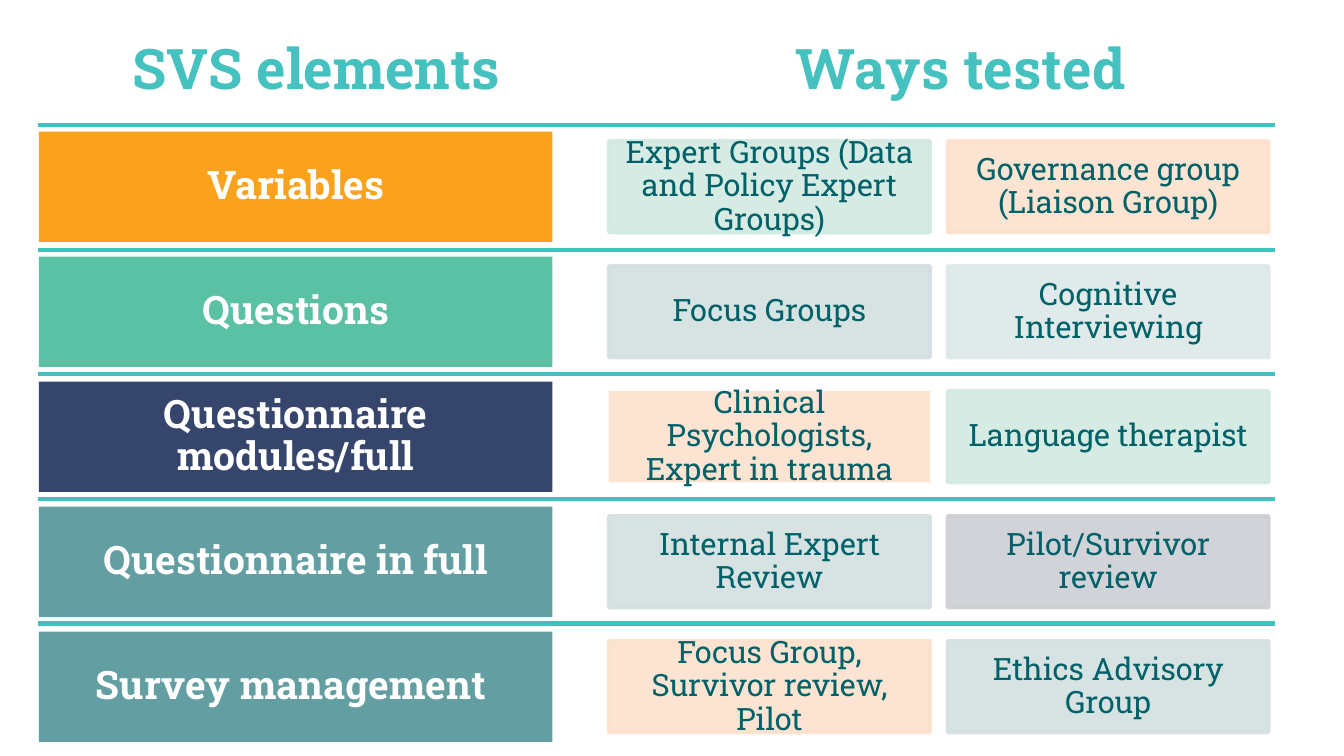
from dataclasses import dataclass

from lxml.etree import SubElement
from pptx import Presentation
from pptx.dml.color import RGBColor as RGB
from pptx.enum.shapes import MSO_CONNECTOR as Link, MSO_SHAPE as Kind
from pptx.enum.text import MSO_ANCHOR as Anchor, PP_ALIGN as Align
from pptx.oxml.ns import qn
from pptx.util import Inches as In, Pt


@dataclass(frozen=True)
class Theme:
    font: str = "Roboto Slab"
    head: str = "45C1C0"
    rule: str = "40C0BF"
    white: str = "FFFFFF"
    ink: str = "006168"
    gold: str = "FAA21B"
    green: str = "5BC1A5"
    navy: str = "35456B"
    teal: str = "639FA2"
    mint: str = "D2E9E1"
    peach: str = "FDE0CC"
    mist: str = "D3DFE0"
    pale: str = "DEE8E8"
    grey: str = "CECFD4"
    big: float = 30
    mid: float = 21
    small: float = 16.5


T = Theme()


def write(shape, text, size, color, bold=False, align=Align.CENTER,
          space=0.9, pad=(0.06, 0), anchor=Anchor.MIDDLE, tabs=()):
    frame = shape.text_frame
    frame.word_wrap = True
    frame.vertical_anchor = anchor
    frame.margin_left = frame.margin_right = In(pad[0])
    frame.margin_top = frame.margin_bottom = In(pad[1])
    par = frame.paragraphs[0]
    par.alignment = align
    par.line_spacing = space
    if tabs:
        stops = SubElement(par._p.get_or_add_pPr(), qn("a:tabLst"))
        for x in tabs:
            SubElement(stops, qn("a:tab"), pos=str(In(x)), algn="l")
    run = par.add_run()
    run.text = text
    run.font.name = T.font
    run.font.size = Pt(size)
    run.font.bold = bold
    run.font.color.rgb = RGB.from_string(color)


def block(x, y, w, h, fill, alpha=100, edge=False):
    """Add a rectangle; alpha is its opacity in percent."""
    shape = page.shapes.add_shape(Kind.RECTANGLE, In(x), In(y), In(w), In(h))
    shape.shadow.inherit = False
    shape.fill.solid()
    paints = [shape.fill]
    if edge:
        shape.line.width = Pt(2)
        shape.line.fill.solid()
        paints.append(shape.line.fill)
    else:
        shape.line.fill.background()
    for paint in paints:
        paint.fore_color.rgb = RGB.from_string(fill)
    if alpha < 100:
        for tone in shape._element.spPr.iter(qn("a:srgbClr")):
            SubElement(tone, qn("a:alpha"), val=str(alpha * 1000))
    return shape


deck = Presentation()
deck.slide_width = In(10)
deck.slide_height = deck.slide_width * 9 // 16
page = deck.slides.add_slide(deck.slide_layouts[6])

# Grid: one row per element, a bar on the left and two cells on the right
STEP = 0.93
LEFT, RIGHT = 0.28, 9.49
RULE_TOP, RULE_END = 0.93, 4.64
BAR_X, BAR_Y, BAR_W, BAR_H = 0.29, 0.98, 3.82, 0.82
CELLS, CELL_Y, CELL_W, CELL_H = (4.53, 7.05), 1.05, 2.39, 0.68

rows = [
    ("Variables", T.gold,
     ("Expert Groups (Data and Policy Expert Groups)", T.mint, True),
     ("Governance group (Liaison Group)", T.peach, True)),
    ("Questions", T.green,
     ("Focus Groups", T.mist, True),
     ("Cognitive Interviewing", T.pale, True)),
    ("Questionnaire modules/full", T.navy,
     ("Clinical Psychologists, Expert in trauma", T.peach, False),
     ("Language therapist", T.mint, True)),
    ("Questionnaire in full", T.teal,
     ("Internal Expert Review", T.mist, True),
     ("Pilot/Survivor review", T.grey, True)),
    ("Survey management ", T.teal,
     ("Focus Group, Survivor review, Pilot", T.peach, True),
     ("Ethics Advisory Group", T.mist, True)),
]
gap = (RULE_END - RULE_TOP) / (len(rows) - 1)

title = page.shapes.add_textbox(In(0.18), In(0.2), In(8.99), In(0.94))
write(title, "\tSVS elements\tWays tested", T.big, T.head, bold=True,
      align=Align.LEFT, space=1, pad=(0.1, 0.05), anchor=Anchor.TOP,
      tabs=(0.71, 5.64))

for n, (name, fill, *tests) in enumerate(rows):
    y = In(RULE_TOP + n * gap)
    rule = page.shapes.add_connector(Link.STRAIGHT, In(LEFT), y, In(RIGHT), y)
    rule.line.width = Pt(2.25)
    rule.line.color.rgb = RGB.from_string(T.rule)
    SubElement(rule._element.spPr, qn("a:effectLst"))

    drop = n * STEP
    bar = block(BAR_X, BAR_Y + drop, BAR_W, BAR_H, fill)
    write(bar, name, T.mid, T.white, bold=True, pad=(0.06, 0.01))
    for x, (text, tint, edge) in zip(CELLS, tests):
        cell = block(x, CELL_Y + drop, CELL_W, CELL_H, tint, 90, edge)
        write(cell, text, T.small, T.ink)

deck.save("out.pptx")
